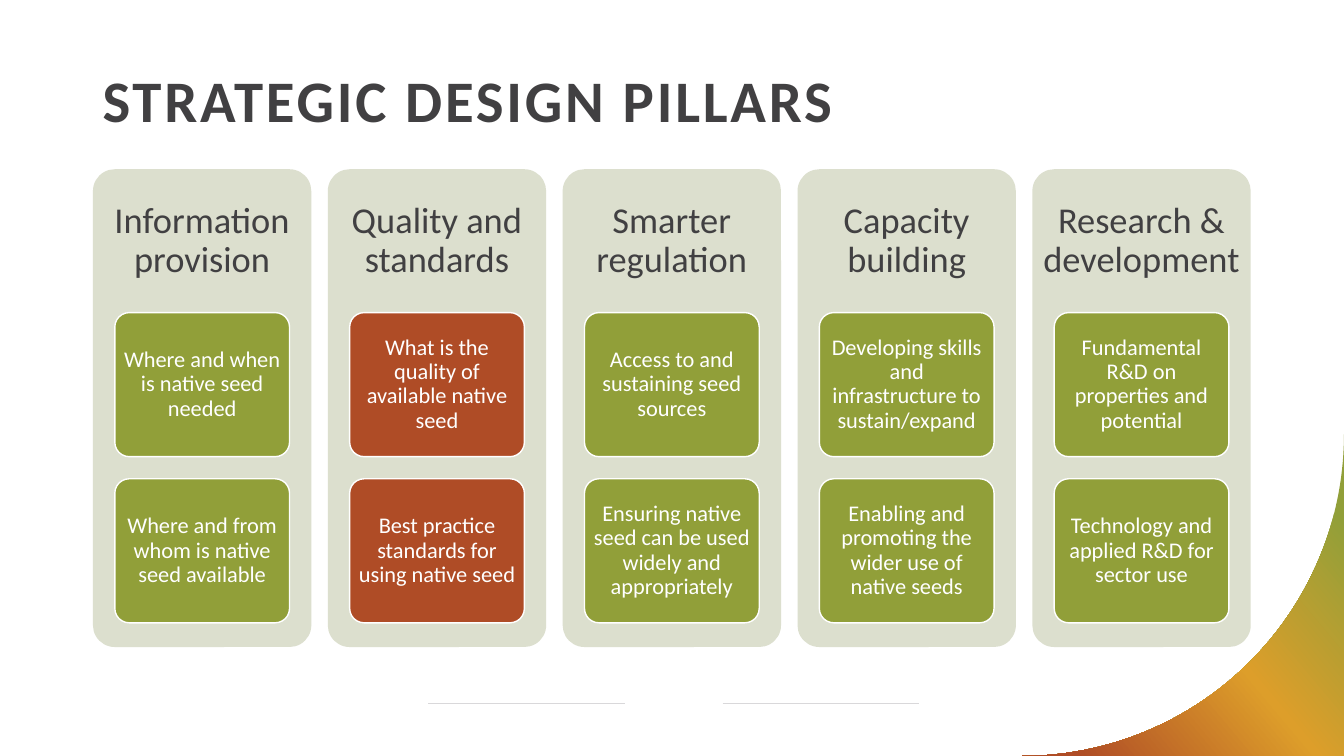
from copy import deepcopy
from math import cos, pi, sin

from pptx import Presentation
from pptx.dml.color import RGBColor as RGB
from pptx.enum.shapes import MSO_CONNECTOR as CONNECTOR, MSO_SHAPE as SHAPE
from pptx.enum.text import MSO_ANCHOR as ANCHOR, PP_ALIGN as ALIGN
from pptx.oxml.ns import qn
from pptx.util import Pt
from lxml.etree import SubElement

COLORS = {
    "text": "414042", "white": "FFFFFF", "panel": "DCDFCE", "rule": "D9D8DA",
    "green": "919F39", "orange": "DD9E2A", "red": "AF4C26",
}

PILLARS = [
    ("Information provision", "green",
     ["Where and when is native seed needed",
      "Where and from whom is native seed available"]),
    ("Quality and standards", "red",
     ["What is the quality of available native seed",
      "Best practice standards for using native seed"]),
    ("Smarter regulation", "green",
     ["Access to and sustaining seed sources",
      "Ensuring native seed can be used widely and appropriately"]),
    ("Capacity building", "green",
     ["Developing skills and infrastructure to sustain/expand",
      "Enabling and promoting the wider use of native seeds"]),
    ("Research & development", "green",
     ["Fundamental R&D on properties and potential",
      "Technology and applied R&D for sector use"]),
]


class PillarSlide:
    font = "Calibri"

    def __init__(self, slide):
        self.shapes = slide.shapes

    def color(self, name):
        return RGB.from_string(COLORS[name])

    def set_text(self, shape, text, size, color, insets, anchor=ANCHOR.MIDDLE,
                 align=ALIGN.CENTER, bold=False, spacing=None):
        frame = shape.text_frame
        frame.text = text
        frame.word_wrap = True
        frame.vertical_anchor = anchor
        frame.margin_left = frame.margin_right = Pt(insets[0])
        frame.margin_top = frame.margin_bottom = Pt(insets[1])
        paragraph = frame.paragraphs[0]
        paragraph.alignment = align
        paragraph.line_spacing = 0.9
        run = paragraph.runs[0]
        run.font.name = self.font
        run.font.size = Pt(size)
        run.font.bold = bold
        run.font.color.rgb = self.color(color)
        if spacing:
            run.font._element.set("spc", str(spacing * 100))

    def label(self, box, text, size, color, insets, **style):
        label = self.shapes.add_textbox(*map(Pt, box))
        self.set_text(label, text, size, color, insets, **style)

    def card(self, box, fill, outline=None):
        card = self.shapes.add_shape(SHAPE.ROUNDED_RECTANGLE, *map(Pt, box))
        card.adjustments[0] = 0.1
        card.shadow.inherit = False
        card.fill.solid()
        card.fill.fore_color.rgb = self.color(fill)
        if outline:
            card.line.color.rgb = self.color(outline)
            card.line.width = Pt(1)
        else:
            card.line.fill.background()
        return card

    def rule(self, left, top, width):
        rule = self.shapes.add_connector(
            CONNECTOR.STRAIGHT, Pt(left), Pt(top), Pt(left + width), Pt(top))
        rule.line.color.rgb = self.color("rule")
        rule.line.width = Pt(0.5)
        SubElement(rule._element.spPr, qn("a:effectLst"))

    def corner(self, right, bottom, radius, stops, angle, steps=90):
        center_x, center_y = right - radius, bottom - radius
        arc = [(Pt(center_x + radius * cos(pi / 2 * i / steps)),
                Pt(center_y + radius * sin(pi / 2 * i / steps)))
               for i in range(steps + 1)]
        builder = self.shapes.build_freeform(Pt(right), Pt(bottom))
        builder.add_line_segments(arc, close=True)
        corner = builder.convert_to_shape()
        corner.shadow.inherit = False
        corner.line.fill.background()
        corner.fill.gradient()
        corner.fill.gradient_angle = angle
        # A new gradient has two stops; add the third
        stop_list = corner._element.spPr.find(".//" + qn("a:gsLst"))
        stop_list.append(deepcopy(stop_list[-1]))
        for stop, (position, name) in zip(corner.fill.gradient_stops, stops):
            stop.position = position
            stop.color.rgb = self.color(name)


def main():
    deck = Presentation()
    deck.slide_width, deck.slide_height = Pt(960), Pt(540)
    page = PillarSlide(deck.slides.add_slide(deck.slide_layouts[6]))

    # Footer rules and corner
    for rule_left in (306, 516.2):
        page.rule(rule_left, 502.5, 140.4)
    page.corner(960, 540, 229.7,
                [(0.12, "green"), (0.5, "orange"), (0.91, "red")], 220)

    # Title
    page.label((66.2, 47.5, 828, 73.4), "STRATEGIC DESIGN PILLARS", 42, "text",
               (7.2, 3.6), anchor=ANCHOR.TOP, align=ALIGN.LEFT,
               bold=True, spacing=2)

    # Pillars with two topics each
    left, top, width, height, pitch = 66.4, 120.9, 156, 341.3, 167.75
    topic_width, topic_height, topic_pitch = 124.8, 102.9, 118.7
    heading_height = 102.4
    for column, (heading, fill, topics) in enumerate(PILLARS):
        x = left + column * pitch
        page.card((x, top, width, height), "panel")
        page.label((x, top, width, heading_height), heading, 26, "text",
                   (7.5, 7.5))
        for row, topic in enumerate(topics):
            box = (x + (width - topic_width) / 2,
                   top + heading_height + row * topic_pitch,
                   topic_width, topic_height)
            page.set_text(page.card(box, fill, "white"), topic, 16, "white",
                          (3, 2.2))

    deck.save("out.pptx")


if __name__ == "__main__":
    main()
